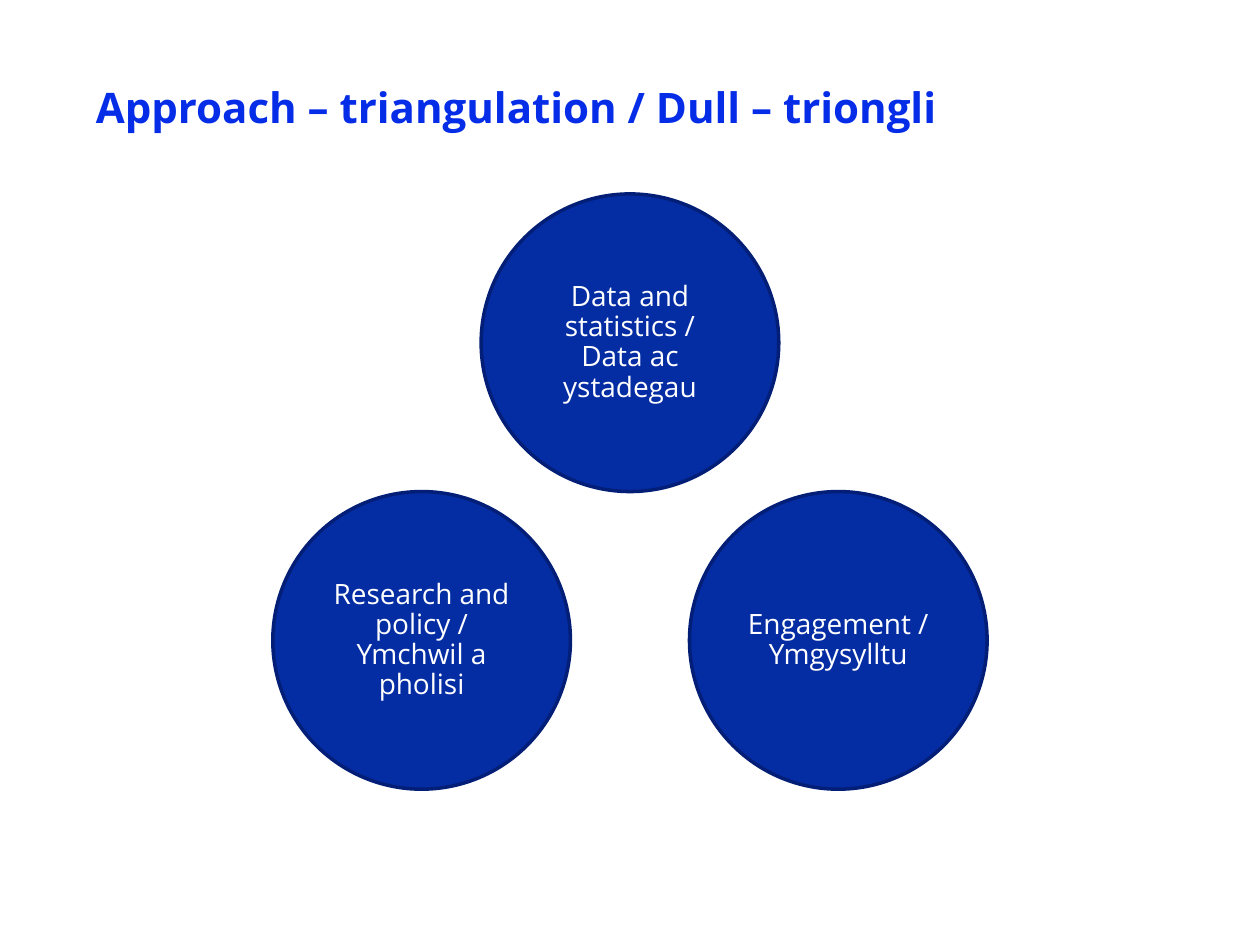
import pptx
import pptx.util
import pptx.dml.color
import pptx.enum.shapes
import pptx.enum.text

Cm, Pt = pptx.util.Cm, pptx.util.Pt
COLORS = {"title": "052DE8", "circle": "052DA3", "outline": "031E77", "label": "FFFFFF"}


def rgb(name):
    return pptx.dml.color.RGBColor.from_string(COLORS[name])


def format_text(frame, size, color, bold, alignment):
    frame.word_wrap = True
    frame.vertical_anchor = pptx.enum.text.MSO_ANCHOR.MIDDLE
    for para in frame.paragraphs:
        para.alignment = alignment
        para.line_spacing = 0.9
        para.space_before = Pt(0)
        for span in para.runs:
            span.font.name = "Open Sans"
            span.font.size = Pt(size)
            span.font.bold = bold
            span.font.color.rgb = rgb(color)


deck = pptx.Presentation()
deck.slide_width, deck.slide_height = Cm(25.4), Cm(19.05)
page = deck.slides.add_slide(deck.slide_layouts[5])

# Title
title = page.shapes.title
title.left, title.top, title.width, title.height = Cm(1.68), Cm(1.14), Cm(22.83), Cm(2.13)
title.text_frame.text = "Approach – triangulation / Dull – triongli"
format_text(title.text_frame, 24, "title", True, pptx.enum.text.PP_ALIGN.LEFT)

# Three circles in a triangle: horizontal offset from the middle, top, text
DIAMETER, MIDDLE = 6, 12.7
TOP_ROW, BOTTOM_ROW, OFFSET = 3.91, 9.91, 4.2
circles = [
    (0, TOP_ROW, "Data and statistics /\nData ac ystadegau"),
    (-OFFSET, BOTTOM_ROW, "Research and policy /\nYmchwil a pholisi"),
    (OFFSET, BOTTOM_ROW, "Engagement / Ymgysylltu"),
]
for offset, top, label in circles:
    circle = page.shapes.add_shape(
        pptx.enum.shapes.MSO_SHAPE.OVAL,
        Cm(MIDDLE + offset - DIAMETER / 2), Cm(top), Cm(DIAMETER), Cm(DIAMETER))
    circle.shadow.inherit = False
    circle.fill.solid()
    circle.fill.fore_color.rgb = rgb("circle")
    circle.line.color.rgb = rgb("outline")
    circle.line.width = Pt(2)
    frame = circle.text_frame
    frame.margin_left = frame.margin_right = Cm(0.05)
    frame.margin_top = frame.margin_bottom = Cm(0.05)
    frame.text = label
    format_text(frame, 16, "label", False, pptx.enum.text.PP_ALIGN.CENTER)

deck.save("out.pptx")
